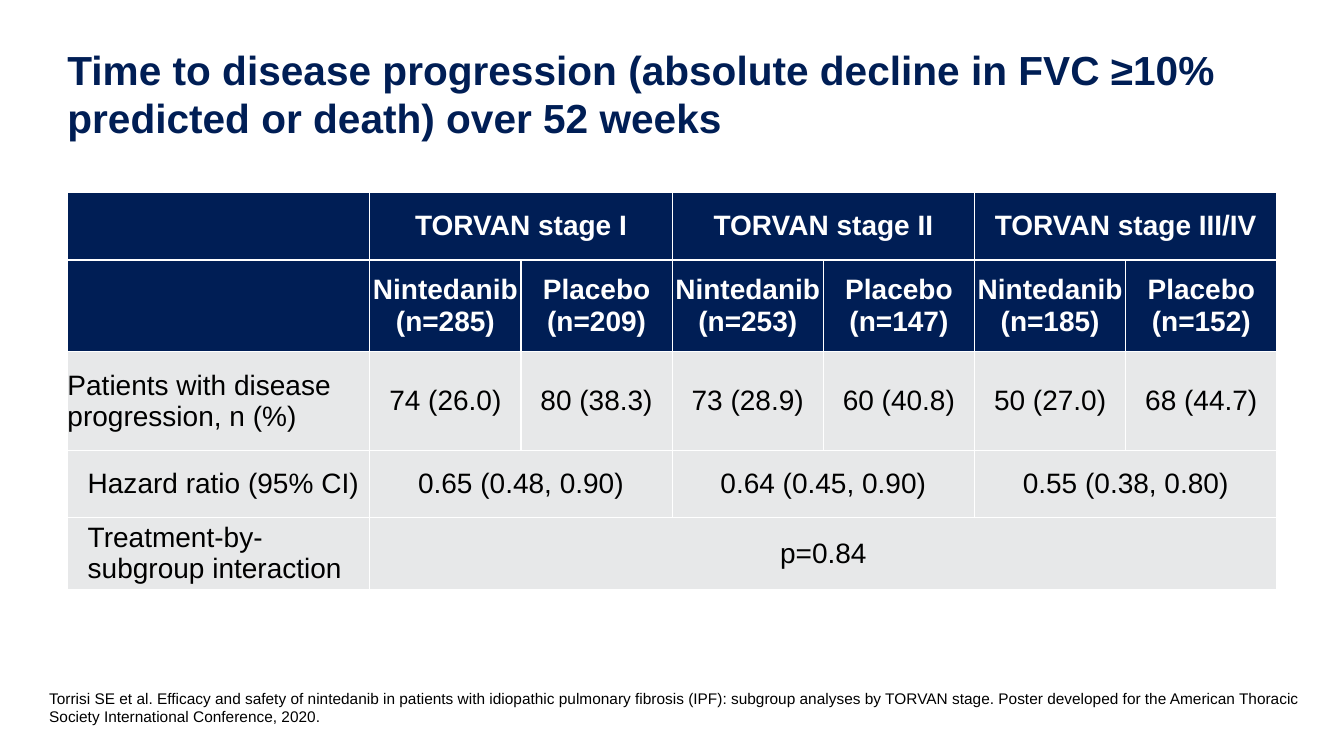
from dataclasses import dataclass

from lxml.etree import SubElement
from pptx import Presentation
from pptx.dml.color import RGBColor
from pptx.enum.text import MSO_ANCHOR, PP_ALIGN
from pptx.oxml.ns import qn
from pptx.slide import Slide
from pptx.table import Table, _Cell
from pptx.text.text import TextFrame
from pptx.util import Cm, Pt

NAVY, GREY, WHITE, BLACK = "001E55", "E7E8E9", "FFFFFF", "000000"
COLS = [7.62] + [3.81] * 6


@dataclass
class Row:
    """Each text covers `span` columns after the label."""
    height: float
    label: str
    texts: list[str]
    span: int = 1
    head: bool = False
    indent: float = 0


ROWS = [
    Row(1.7, "", ["TORVAN stage I", "TORVAN stage II", "TORVAN stage III/IV"], span=2, head=True),
    Row(2.31, "", ["Nintedanib (n=285)", "Placebo (n=209)", "Nintedanib (n=253)",
                   "Placebo (n=147)", "Nintedanib (n=185)", "Placebo (n=152)"], head=True),
    Row(2.49, "Patients with disease progression, n (%)",
        ["74 (26.0)", "80 (38.3)", "73 (28.9)", "60 (40.8)", "50 (27.0)", "68 (44.7)"]),
    Row(1.7, "Hazard ratio (95% CI)",
        ["0.65 (0.48, 0.90)", "0.64 (0.45, 0.90)", "0.55 (0.38, 0.80)"], span=2, indent=0.51),
    Row(1.8, "Treatment-by-subgroup interaction", ["p=0.84"], span=6, indent=0.51),
]


def color(code: str) -> RGBColor:
    return RGBColor.from_string(code)


def write(frame: TextFrame, text: str, *, size: float = 20, ink: str = BLACK,
          bold: bool = False, align: PP_ALIGN = PP_ALIGN.LEFT, indent: float = 0) -> None:
    para = frame.paragraphs[0]
    para.alignment = align
    if indent:
        props = para._p.get_or_add_pPr()
        props.set("marL", str(Cm(indent)))
        props.set("indent", "0")
    run = para.add_run()
    run.text = text
    font = run.font
    font.name, font.size, font.bold = "Arial", Pt(size), bold
    font.color.rgb = color(ink)


def add_box(slide: Slide, left: float, top: float, width: float, height: float,
            anchor: MSO_ANCHOR) -> TextFrame:
    frame = slide.shapes.add_textbox(Cm(left), Cm(top), Cm(width), Cm(height)).text_frame
    frame.word_wrap = True
    frame.vertical_anchor = anchor
    return frame


def clear(area: TextFrame | _Cell) -> None:
    """Remove the inner margins."""
    area.margin_left = area.margin_right = area.margin_top = area.margin_bottom = 0


def style(cell: _Cell, fill: str) -> None:
    clear(cell)
    cell.vertical_anchor = MSO_ANCHOR.MIDDLE
    props = cell._tc.get_or_add_tcPr()
    for side in ("lnL", "lnR", "lnT", "lnB"):
        line = SubElement(props, qn(f"a:{side}"), w=str(Pt(1)))
        solid = SubElement(line, qn("a:solidFill"))
        SubElement(solid, qn("a:srgbClr"), val=WHITE)
    cell.fill.solid()
    cell.fill.fore_color.rgb = color(fill)


def fill_row(table: Table, index: int, row: Row) -> None:
    table.rows[index].height = Cm(row.height)
    for col in range(len(COLS)):
        style(table.cell(index, col), NAVY if row.head else GREY)
    if row.label:
        write(table.cell(index, 0).text_frame, row.label, indent=row.indent)
    for order, text in enumerate(row.texts):
        col = 1 + order * row.span
        cell = table.cell(index, col)
        if row.span > 1:
            cell.merge(table.cell(index, col + row.span - 1))
        write(cell.text_frame, text, ink=WHITE if row.head else BLACK,
              bold=row.head, align=PP_ALIGN.CENTER)


def add_grid(slide: Slide) -> None:
    total = sum(row.height for row in ROWS)
    table = slide.shapes.add_table(len(ROWS), len(COLS), Cm(1.7), Cm(4.85),
                                   Cm(sum(COLS)), Cm(total)).table
    table.first_row = table.horz_banding = False
    for col, width in zip(table.columns, COLS):
        col.width = Cm(width)
    for index, row in enumerate(ROWS):
        fill_row(table, index, row)


def main() -> None:
    deck = Presentation()
    deck.slide_width, deck.slide_height = Cm(33.87), Cm(19.05)
    slide = deck.slides.add_slide(deck.slide_layouts[6])

    title = add_box(slide, 1.7, 0.76, 30.48, 3.18, MSO_ANCHOR.MIDDLE)
    clear(title)
    write(title, "Time to disease progression (absolute decline in FVC ≥10% predicted or death) "
          "over 52 weeks", size=29, ink=NAVY, bold=True)

    source = add_box(slide, 0.99, 17.22, 32.87, 1.19, MSO_ANCHOR.BOTTOM)
    write(source, "Torrisi SE et al. Efficacy and safety of nintedanib in patients with idiopathic "
          "pulmonary fibrosis (IPF): subgroup analyses by TORVAN stage. Poster developed for the "
          "American Thoracic Society International Conference, 2020.", size=11)

    add_grid(slide)
    deck.save("out.pptx")


if __name__ == "__main__":
    main()
